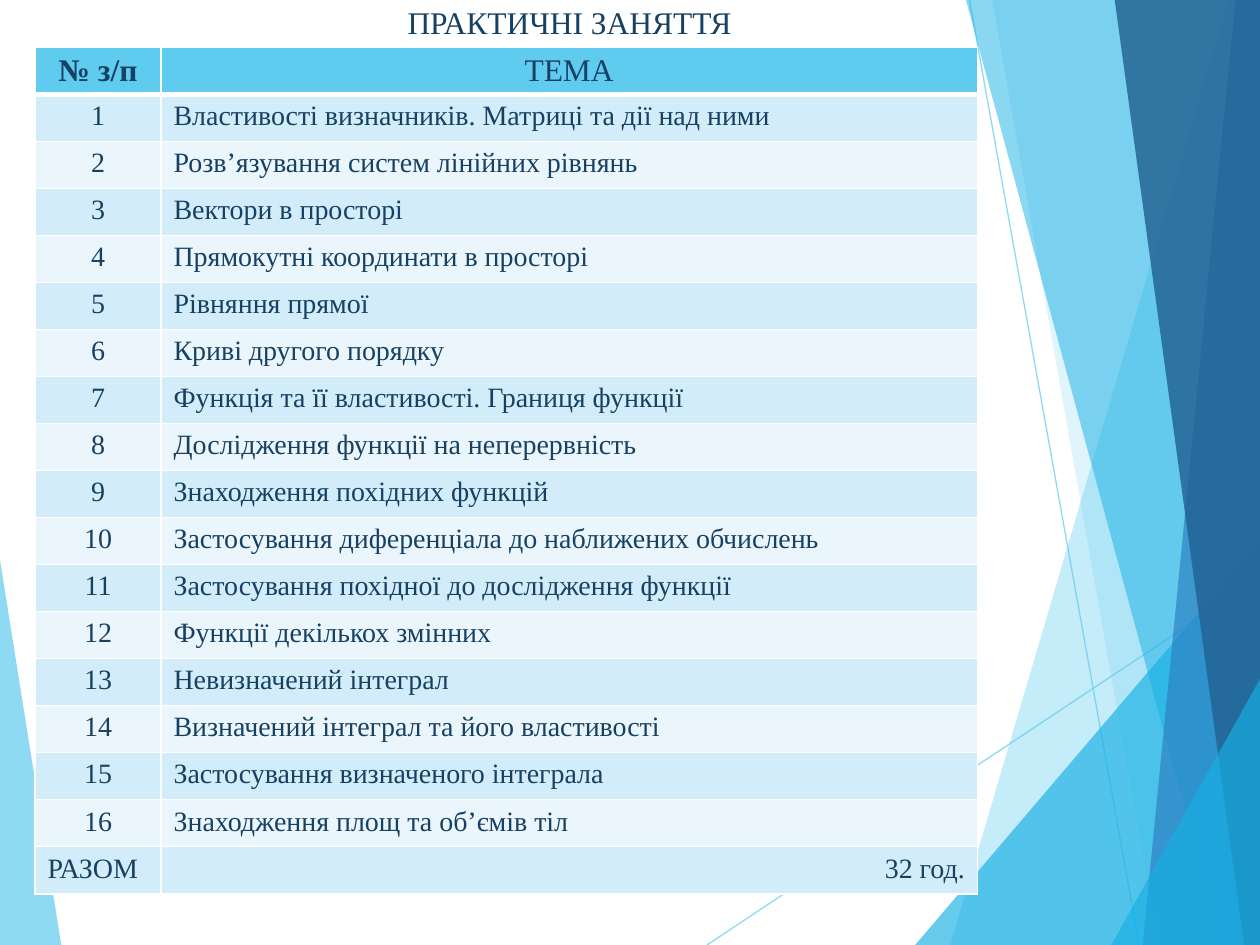
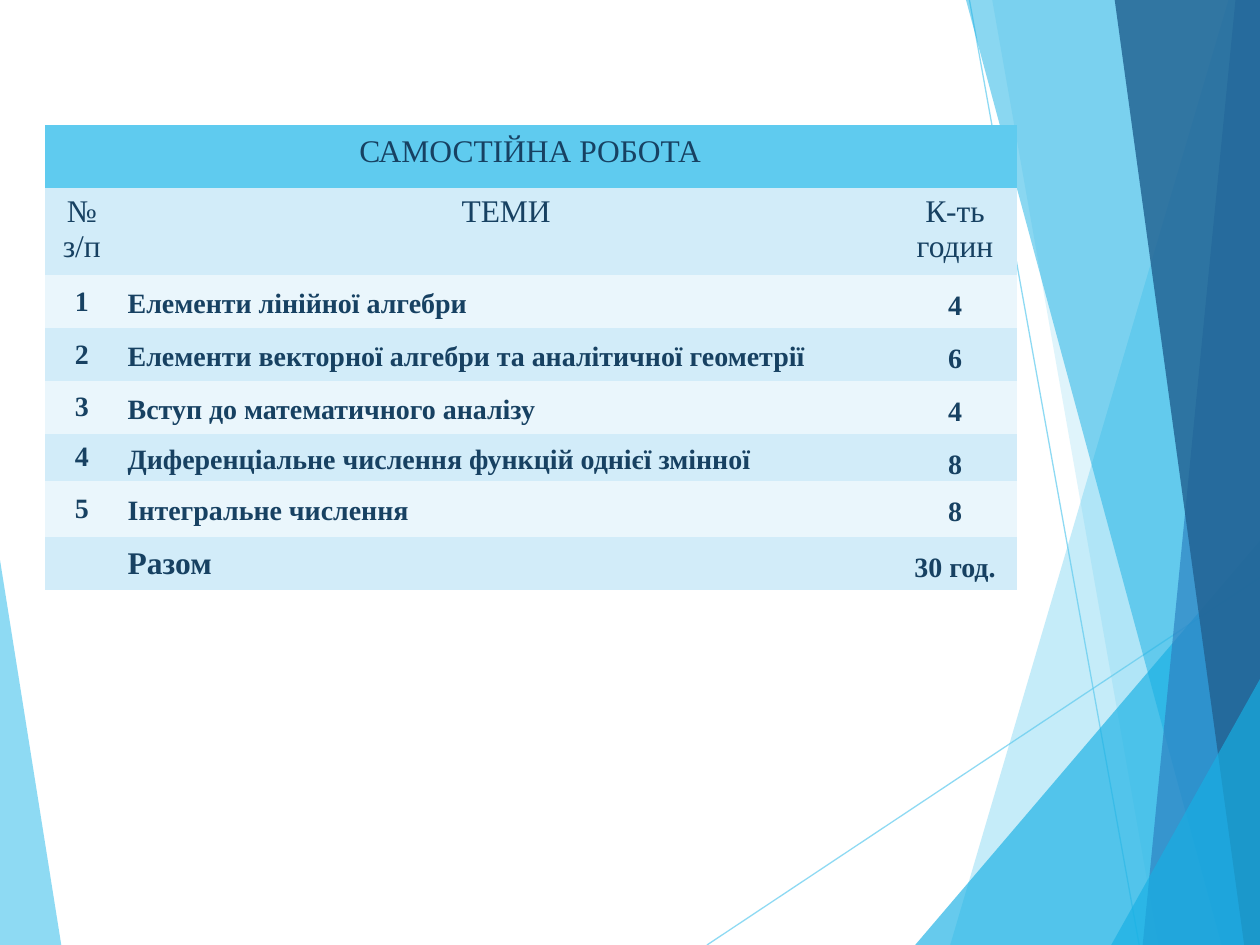
from dataclasses import dataclass

from lxml.etree import SubElement
from pptx import Presentation
from pptx.dml.color import RGBColor
from pptx.enum.shapes import MSO_CONNECTOR
from pptx.enum.text import MSO_ANCHOR, MSO_AUTO_SIZE, PP_ALIGN
from pptx.oxml.ns import qn
from pptx.util import Pt

WIDTH, HEIGHT = 720, 540
TITLE_ONLY = 5
PLAIN_TABLE_STYLE = "{2D5ABB26-0587-4C30-8999-92F81FD0307C}"


@dataclass(frozen=True)
class Theme:
    font: str = "Times New Roman"
    heading_size: int = 18
    body_size: int = 16
    ink: str = "174162"
    white: str = "FFFFFF"
    sky: str = "5FCBEF"
    azure: str = "17B0E4"
    blue: str = "2E83C3"
    navy: str = "226292"
    row_fills: tuple = ("D2ECF9", "EAF6FC")


THEME = Theme()

# Corner points, colour and opacity in percent
LEFT_WEDGE = ([(0, 320), (35, 540), (0, 540)], THEME.sky, 70)
RIGHT_BANDS = [
    ([(702, 0), (543, 540), (720, 540), (720, 0)], THEME.sky, 36),
    ([(567, 0), (662, 540), (720, 540), (720, 0)], THEME.sky, 20),
    ([(523, 540), (720, 309), (720, 540)], THEME.azure, 66),
    ([(552, 0), (698, 540), (720, 540), (720, 0)], THEME.azure, 50),
    ([(706, 0), (653, 540), (720, 540), (720, 0)], THEME.blue, 70),
    ([(637, 0), (711, 540), (720, 540), (720, 0)], THEME.navy, 82),
    ([(635, 540), (720, 388), (720, 540)], THEME.azure, 66),
]
THIN_LINES = [((404, 540), (720, 330)), ((554, 0), (651, 540))]

PRACTICE_TOPICS = [
    "Властивості визначників. Матриці та дії над ними",
    "Розв’язування систем лінійних рівнянь",
    "Вектори в просторі",
    "Прямокутні координати в просторі",
    "Рівняння прямої",
    "Криві другого порядку",
    "Функція та її властивості. Границя функції",
    "Дослідження функції на неперервність",
    "Знаходження похідних функцій",
    "Застосування диференціала до наближених обчислень",
    "Застосування похідної до дослідження функції",
    "Функції декількох змінних",
    "Невизначений інтеграл",
    "Визначений інтеграл та його властивості",
    "Застосування визначеного інтеграла",
    "Знаходження площ та об’ємів тіл",
]
SELF_STUDY_TOPICS = [
    ("Елементи лінійної алгебри", "4"),
    ("Елементи векторної алгебри та аналітичної геометрії", "6"),
    ("Вступ до математичного аналізу", "4"),
    ("Диференціальне числення функцій однієї змінної", "8"),
    ("Інтегральне числення", "8"),
]


def apply(target, values):
    for name, value in values.items():
        setattr(target, name, value)


def set_opacity(element, percent):
    color = element.find(".//" + qn("a:srgbClr"))
    SubElement(color, qn("a:alpha"), val=str(percent * 1000))


class Deck:
    def __init__(self, theme):
        self.theme = theme
        self.deck = Presentation()
        apply(self.deck, {"slide_width": Pt(WIDTH), "slide_height": Pt(HEIGHT)})
        self.layout = self.deck.slide_layouts[TITLE_ONLY]
        self.page = None

    def add_page(self):
        self.page = self.deck.slides.add_slide(self.layout)

    def band(self, points, color, opacity):
        builder = self.page.shapes.build_freeform(*points[0], scale=Pt(1))
        builder.add_line_segments(points[1:], close=True)
        shape = builder.convert_to_shape()
        shape.shadow.inherit = False
        shape.fill.solid()
        shape.fill.fore_color.rgb = RGBColor.from_string(color)
        shape.line.fill.background()
        set_opacity(shape._element, opacity)
        return shape

    def thin_line(self, start, end):
        line = self.page.shapes.add_connector(
            MSO_CONNECTOR.STRAIGHT, *map(Pt, start + end))
        line.line.width = Pt(0.75)
        line.line.color.rgb = RGBColor.from_string(self.theme.sky)
        set_opacity(line._element, 70)
        SubElement(line._element.spPr, qn("a:effectLst"))
        return line

    def share_background(self):
        """Draw the bands on the current page and move them to its layout."""
        shapes = [self.band(*LEFT_WEDGE)]
        shapes += [self.thin_line(*ends) for ends in THIN_LINES]
        shapes += [self.band(*band) for band in RIGHT_BANDS]
        for number, shape in enumerate(shapes, start=100):
            element = shape._element
            element.find(".//" + qn("p:cNvPr")).set("id", str(number))
            self.layout.shapes._spTree.append(element)

    def add_text(self, frame, text, size, bold=False, **para_format):
        para = frame.paragraphs[0]
        apply(para, para_format)
        span = para.add_run()
        span.text = text
        apply(span.font, {"name": self.theme.font, "size": Pt(size), "bold": bold})
        span.font.color.rgb = RGBColor.from_string(self.theme.ink)

    def title(self, text, left, top):
        """Fill the title placeholder and bring it in front of the table."""
        box = self.page.shapes.title
        apply(box, {"left": Pt(left), "top": Pt(top),
                    "width": Pt(361), "height": Pt(29)})
        apply(box.text_frame, {"word_wrap": True,
                               "auto_size": MSO_AUTO_SIZE.NONE,
                               "vertical_anchor": MSO_ANCHOR.TOP})
        self.add_text(box.text_frame, text, self.theme.heading_size,
                      alignment=PP_ALIGN.CENTER)
        self.page.shapes._spTree.append(box._element)

    def table(self, left, top, widths, heights):
        """Add an empty table with a header row and alternating row fills."""
        frame = self.page.shapes.add_table(
            len(heights), len(widths), Pt(left), Pt(top),
            Pt(sum(widths)), Pt(sum(heights)))
        table = frame.table
        table._tbl.tblPr.find(qn("a:tableStyleId")).text = PLAIN_TABLE_STYLE
        for column, width in zip(table.columns, widths):
            column.width = Pt(width)
        for index, (row, height) in enumerate(zip(table.rows, heights)):
            row.height = Pt(height)
            color = self.theme.row_fills[(index - 1) % 2] if index else self.theme.sky
            for cell in row.cells:
                cell.fill.solid()
                cell.fill.fore_color.rgb = RGBColor.from_string(color)
        return table

    def cell(self, cell, text, size, bold=False, cell_format=None, **para_format):
        apply(cell, cell_format or {})
        self.add_text(cell.text_frame, text, size, bold, **para_format)

    def grid_lines(self, table):
        """Rule every cell in white, with a thicker line under the header."""
        for index, row in enumerate(table.rows):
            for cell in row.cells:
                properties = cell._tc.get_or_add_tcPr()
                for position, side in enumerate(("lnL", "lnR", "lnT", "lnB")):
                    under_header = (index, side) in ((0, "lnB"), (1, "lnT"))
                    line = SubElement(properties, qn("a:" + side),
                                      w=str(Pt(3 if under_header else 1)))
                    fill = SubElement(line, qn("a:solidFill"))
                    SubElement(fill, qn("a:srgbClr"), val=self.theme.white)
                    properties.insert(position, line)


def build_practice(deck):
    heading, body = deck.theme.heading_size, deck.theme.body_size
    center = PP_ALIGN.CENTER
    table = deck.table(20, 27, (72, 466.5), [26.9] * (len(PRACTICE_TOPICS) + 2))
    deck.grid_lines(table)
    tight = {"margin_bottom": Pt(2)}
    deck.cell(table.cell(0, 0), "№ з/п", heading, True, tight, alignment=center)
    deck.cell(table.cell(0, 1), "ТЕМА", heading, False, tight, alignment=center)
    for number, topic in enumerate(PRACTICE_TOPICS, start=1):
        deck.cell(table.cell(number, 0), str(number), body, alignment=center)
        deck.cell(table.cell(number, 1), topic, body)
    last = len(PRACTICE_TOPICS) + 1
    deck.cell(table.cell(last, 0), "РАЗОМ", body)
    deck.cell(table.cell(last, 1), "32 год.", body, alignment=PP_ALIGN.RIGHT)
    deck.title("ПРАКТИЧНІ ЗАНЯТТЯ", 145, -2)


def build_self_study(deck):
    heading, body = deck.theme.heading_size, deck.theme.body_size
    center = PP_ALIGN.CENTER
    middle = {"vertical_anchor": MSO_ANCHOR.MIDDLE}
    flat = {"margin_left": Pt(5), "margin_right": Pt(5),
            "margin_top": 0, "margin_bottom": 0}
    table = deck.table(25.5, 71.5, (42.5, 442.5, 70.5),
                       (36, 49.75, 30.25, 30.25, 30.25, 26.75, 32.25, 30.25))
    table.cell(0, 0).merge(table.cell(0, 2))
    for column, label in enumerate(("№ з/п", "ТЕМИ", "К-ть годин")):
        deck.cell(table.cell(1, column), label, heading, alignment=center)
    hours_format = {"alignment": center, "line_spacing": 1.5}
    for number, (topic, hours) in enumerate(SELF_STUDY_TOPICS, start=1):
        row = number + 1
        deck.cell(table.cell(row, 0), str(number), body, True, middle,
                  alignment=center)
        deck.cell(table.cell(row, 1), topic, body, True, flat | middle,
                  line_spacing=1.15, space_after=Pt(10))
        deck.cell(table.cell(row, 2), hours, body, True, flat, **hours_format)
    last = len(SELF_STUDY_TOPICS) + 2
    deck.cell(table.cell(last, 1), "Разом", heading, True, flat | middle)
    deck.cell(table.cell(last, 2), "30 год.", body, True, flat, **hours_format)
    deck.title("САМОСТІЙНА РОБОТА", 122.5, 71.5)


def main():
    deck = Deck(THEME)
    deck.add_page()
    deck.share_background()
    build_practice(deck)
    deck.add_page()
    build_self_study(deck)
    deck.deck.save("out.pptx")


if __name__ == "__main__":
    main()
